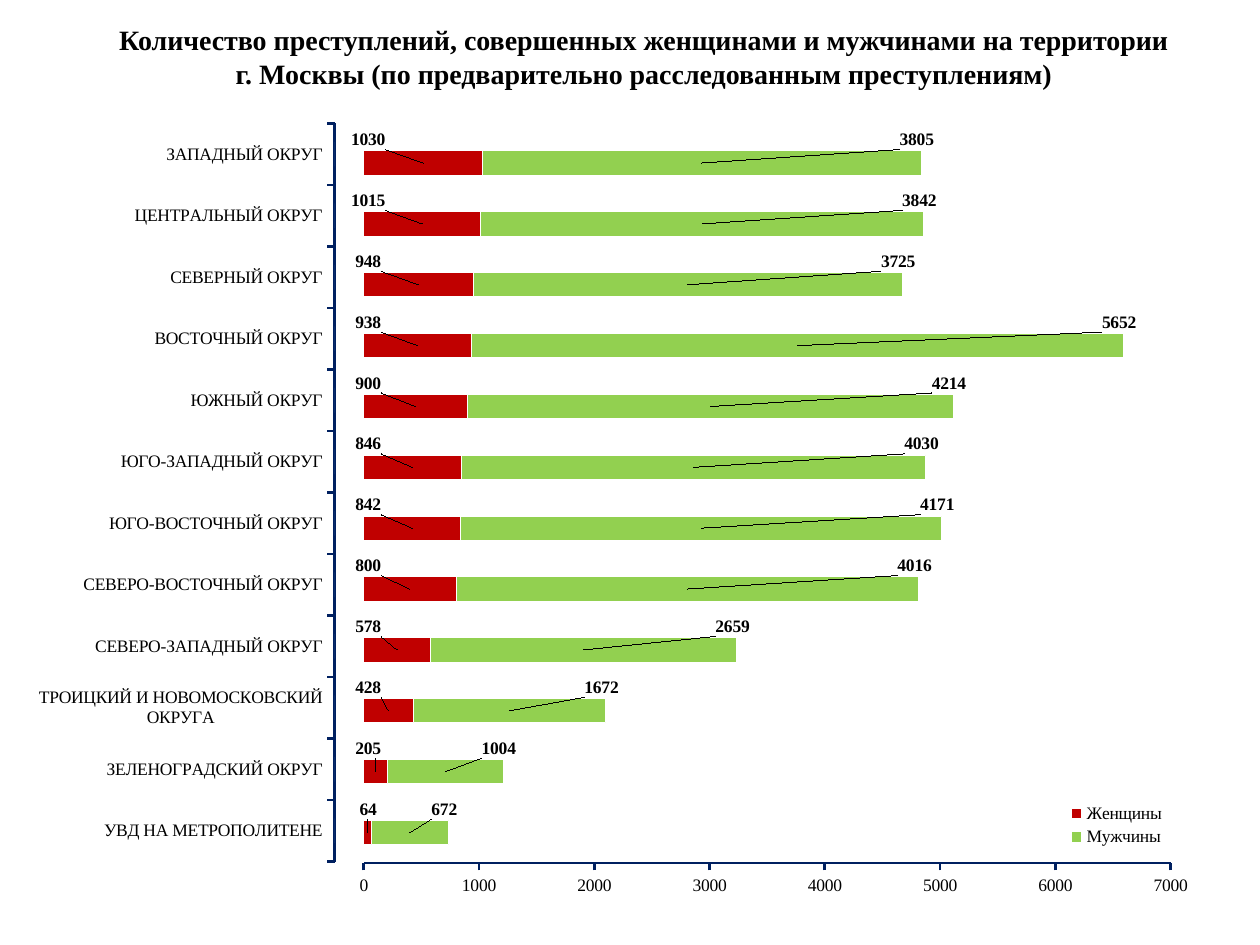
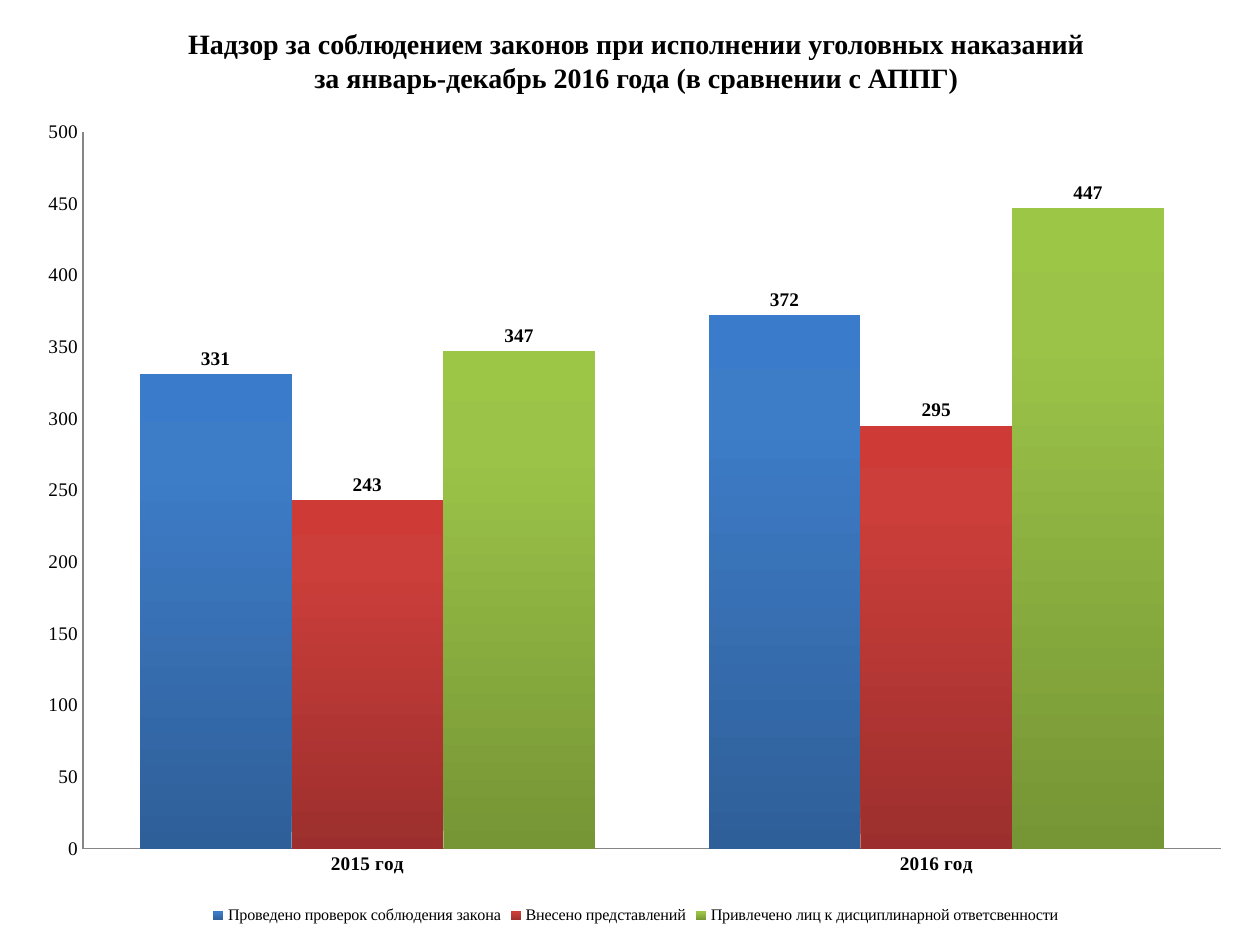
from copy import deepcopy
from typing import NamedTuple

from lxml import etree
from pptx import Presentation
from pptx import util as u
from pptx.chart.data import CategoryChartData
from pptx.dml.color import RGBColor
from pptx.enum import chart as ch
from pptx.enum import text
from pptx.oxml.ns import qn

FONT = "Times New Roman"
BLACK, WHITE, NAVY, GREY = "000000", "FFFFFF", "002060", "868686"
TITLE_ONLY = 5


class Box(NamedTuple):
    """A rectangle on the slide, in points."""
    left: float
    top: float
    width: float
    height: float

    def emu(self) -> list:
        return [u.Pt(v) for v in self]


class Series(NamedTuple):
    name: str
    values: tuple
    colors: tuple  # one colour, or gradient stops from bottom to top


TITLE_BOXES = Box(42.5, 9.4, 651, 56), Box(39.6, 11.5, 648, 55.5)
STOPS = 0, 0.8, 1

DISTRICTS = (
    "УВД НА МЕТРОПОЛИТЕНЕ", "ЗЕЛЕНОГРАДСКИЙ ОКРУГ",
    "ТРОИЦКИЙ И НОВОМОСКОВСКИЙ ОКРУГА", "СЕВЕРО-ЗАПАДНЫЙ ОКРУГ",
    "СЕВЕРО-ВОСТОЧНЫЙ ОКРУГ", "ЮГО-ВОСТОЧНЫЙ ОКРУГ", "ЮГО-ЗАПАДНЫЙ ОКРУГ",
    "ЮЖНЫЙ ОКРУГ", "ВОСТОЧНЫЙ ОКРУГ", "СЕВЕРНЫЙ ОКРУГ",
    "ЦЕНТРАЛЬНЫЙ ОКРУГ", "ЗАПАДНЫЙ ОКРУГ",
)
CRIMES = (
    Series("Женщины", (64, 205, 428, 578, 800, 842, 846, 900, 938, 948, 1015, 1030),
           ("C00000",)),
    Series("Мужчины", (672, 1004, 1672, 2659, 4016, 4171, 4030, 4214, 5652, 3725,
                       3842, 3805), ("92D050",)),
)
SUPERVISION = (
    Series("Проведено проверок соблюдения закона", (331, 372),
           ("2F5F99", "3D7CC7", "3A7CCB")),
    Series("Внесено представлений", (243, 295), ("9C2F2D", "CB3E3A", "CE3B37")),
    Series("Привлечено лиц к дисциплинарной ответсвенности", (347, 447),
           ("769535", "9BC348", "9CC746")),
)


def rgb(color: str) -> RGBColor:
    return RGBColor.from_string(color)


def set_font(font, size: float = 10, bold: bool = False) -> None:
    font.name, font.size, font.bold = FONT, u.Pt(size), bold
    font.color.rgb = rgb(BLACK)


def add_titled_slide(prs, box: Box, *lines: str):
    slide = prs.slides.add_slide(prs.slide_layouts[TITLE_ONLY])
    sp = slide.shapes.title
    sp.left, sp.top, sp.width, sp.height = box.emu()
    tf = sp.text_frame
    tf.text = "\n".join(lines)
    tf.word_wrap = True
    tf.auto_size = text.MSO_AUTO_SIZE.NONE
    tf.vertical_anchor = text.MSO_ANCHOR.TOP
    for p in tf.paragraphs:
        p.alignment = text.PP_ALIGN.CENTER
        set_font(p.runs[0].font, 16, True)
    return slide


def set_layout(parent, index: int, **settings) -> None:
    """Give a chart element a manual layout as its child number index."""
    for old in parent.findall(qn("c:layout")):
        parent.remove(old)
    layout = etree.Element(qn("c:layout"))
    manual = etree.SubElement(layout, qn("c:manualLayout"))
    for tag, val in settings.items():
        etree.SubElement(manual, qn(f"c:{tag}")).set("val", str(val))
    parent.insert(index, layout)


def place(parent, index: int, box: Box, frame: Box, **target) -> None:
    """Place a piece of a chart at a box given in slide points."""
    set_layout(parent, index, **target, xMode="edge", yMode="edge",
               x=(box.left - frame.left) / frame.width,
               y=(box.top - frame.top) / frame.height,
               w=box.width / frame.width, h=box.height / frame.height)


def add_chart(slide, kind, frame: Box, plot_box: Box, categories, series, gap: int):
    data = CategoryChartData()
    data.categories = categories
    for s in series:
        data.add_series(s.name, s.values)
    chart = slide.shapes.add_chart(kind, *frame.emu(), data).chart
    chart.has_title = chart.has_legend = False
    set_font(chart.font)
    chart_space = chart.element
    sp_pr = etree.Element(qn("c:spPr"))
    etree.SubElement(sp_pr, qn("a:noFill"))
    etree.SubElement(etree.SubElement(sp_pr, qn("a:ln")), qn("a:noFill"))
    chart_space.find(qn("c:txPr")).addprevious(sp_pr)
    place(next(chart_space.iter(qn("c:plotArea"))), 0, plot_box, frame,
          layoutTarget="inner")

    plot = chart.plots[0]
    plot.gap_width, plot.vary_by_categories = gap, False
    for drawn, s in zip(plot.series, series):
        drawn.invert_if_negative = False
        paint(drawn, s.colors)
    return chart


def paint(series, colors: tuple) -> None:
    fill = series.format.fill
    if len(colors) == 1:
        fill.solid()
        fill.fore_color.rgb = rgb(colors[0])
        return
    fill.gradient()
    fill.gradient_angle = 90
    stops = next(series._element.iter(qn("a:gsLst")))
    stops.append(deepcopy(stops[0]))
    for stop, position, color in zip(fill.gradient_stops, STOPS, colors):
        stop.position, stop.color.rgb = position, rgb(color)


def style_axis(axis, color: str, width: float, tick, size: float = 10,
               bold: bool = False) -> None:
    axis.has_major_gridlines = False
    axis.major_tick_mark, axis.minor_tick_mark = tick, ch.XL_TICK_MARK.NONE
    axis.format.line.color.rgb = rgb(color)
    axis.format.line.width = u.Pt(width)
    set_font(axis.tick_labels.font, size, bold)


def set_scale(axis, maximum: float, step: float) -> None:
    axis.has_major_gridlines = False
    axis.minimum_scale, axis.maximum_scale, axis.major_unit = 0, maximum, step


def add_legend(chart, position, size: float) -> None:
    chart.has_legend = True
    chart.legend.position = position
    chart.legend.include_in_layout = False
    set_font(chart.legend.font, size)


def label_above_bars(series, values, side: int, full_width: float) -> None:
    """Move labels from bar centres to above the start (-1) or the end (1)."""
    for i in range(len(values)):
        label = series.points[i].data_label
        set_font(label.font, 10, True)
        label.position = ch.XL_LABEL_POSITION.CENTER
    for label, value in zip(series._element.iter(qn("c:dLbl")), values):
        half_bar = value / 2 * full_width
        set_layout(label, 1, x=side * (half_bar - 0.004), y=-0.03)


def build_crimes(prs) -> None:
    slide = add_titled_slide(
        prs, TITLE_BOXES[0],
        "Количество преступлений, совершенных женщинами и мужчинами на территории",
        "г. Москвы (по предварительно расследованным преступлениям)")

    names = add_chart(slide, ch.XL_CHART_TYPE.BAR_CLUSTERED,
                      Box(-8.6, 60.5, 732.2, 442.1), Box(191.3, 70.6, 335.4, 421.8),
                      DISTRICTS, [Series("Series 1", (0,) * len(DISTRICTS), ("4F81BD",))],
                      150)
    style_axis(names.category_axis, NAVY, 1.5, ch.XL_TICK_MARK.OUTSIDE)
    set_scale(names.value_axis, 1, 1)
    names.value_axis.visible = False

    frame, plot_box = Box(115.9, 65.5, 621.4, 446.4), Box(207.9, 75.8, 461.1, 417.4)
    top_value = 7000
    bars = add_chart(slide, ch.XL_CHART_TYPE.BAR_STACKED, frame, plot_box,
                     [str(i + 1) for i in range(len(DISTRICTS))], CRIMES, 150)
    bars.plots[0].overlap = 100
    bars.category_axis.visible = False
    set_scale(bars.value_axis, top_value, 1000)
    style_axis(bars.value_axis, NAVY, 1.5, ch.XL_TICK_MARK.OUTSIDE)
    for drawn, s, side in zip(bars.plots[0].series, CRIMES, (-1, 1)):
        drawn.format.line.color.rgb = rgb(WHITE)
        drawn.format.line.width = u.Pt(0.5)
        label_above_bars(drawn, s.values, side, plot_box.width / frame.width / top_value)
    add_legend(bars, ch.XL_LEGEND_POSITION.RIGHT, 10)
    place(bars.legend._element, 1, Box(607, 457, 62, 29), frame)


def build_supervision(prs) -> None:
    slide = add_titled_slide(
        prs, TITLE_BOXES[1],
        "Надзор за соблюдением законов при исполнении уголовных наказаний",
        "за январь-декабрь 2016 года (в сравнении с АППГ)")
    chart = add_chart(slide, ch.XL_CHART_TYPE.COLUMN_CLUSTERED,
                      Box(14.4, 60.5, 697.7, 470.9), Box(47.4, 75.4, 650.3, 409.7),
                      ("2015 год", "2016 год"), SUPERVISION, 75)
    chart.plots[0].overlap = 0
    set_scale(chart.value_axis, 500, 50)
    style_axis(chart.value_axis, GREY, 0.75, ch.XL_TICK_MARK.NONE, 11)
    style_axis(chart.category_axis, GREY, 0.75, ch.XL_TICK_MARK.NONE, 11, True)
    for drawn in chart.plots[0].series:
        labels = drawn.data_labels
        labels.show_value = True
        labels.position = ch.XL_LABEL_POSITION.OUTSIDE_END
        set_font(labels.font, 11, True)
    add_legend(chart, ch.XL_LEGEND_POSITION.BOTTOM, 9.2)


def main() -> None:
    prs = Presentation()
    prs.slide_width, prs.slide_height = u.Pt(720), u.Pt(540)
    build_crimes(prs)
    build_supervision(prs)
    prs.save("out.pptx")


if __name__ == "__main__":
    main()
